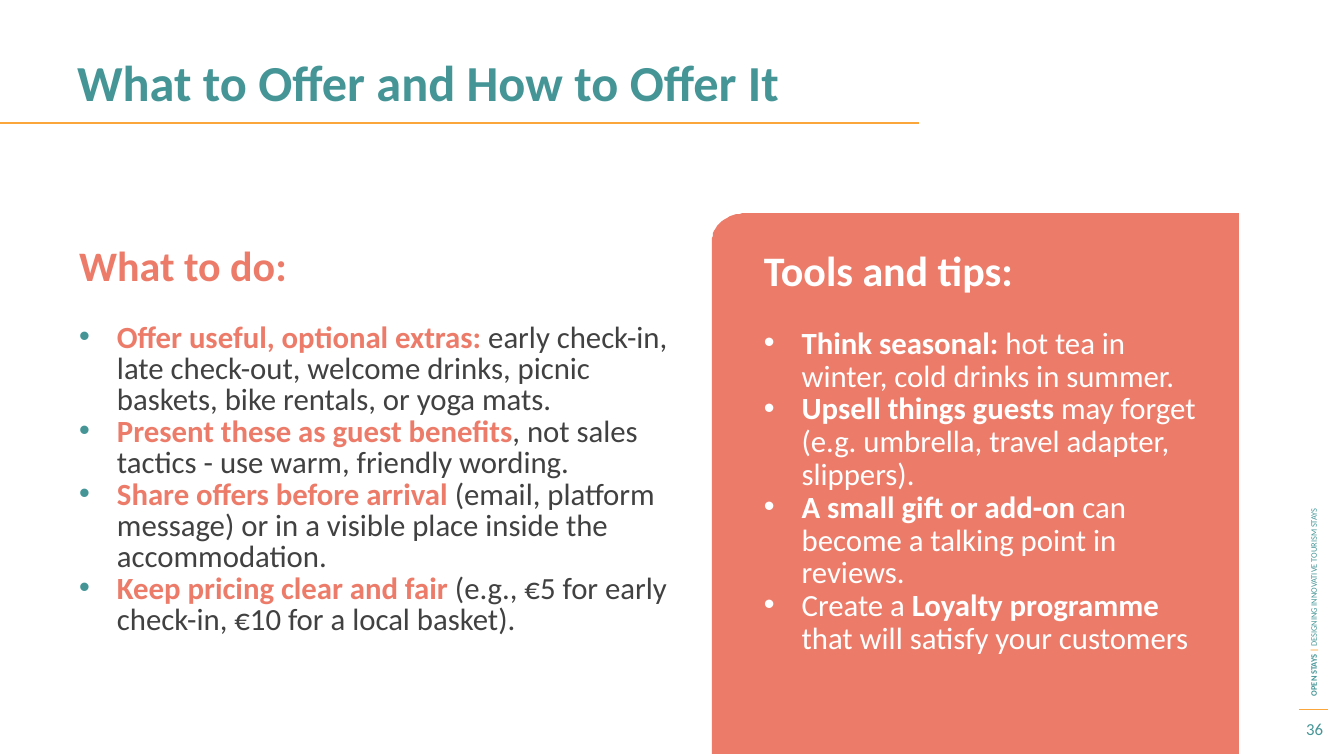
from math import cos, pi, sin

from lxml.etree import SubElement
from pptx import Presentation
from pptx.dml.color import RGBColor
from pptx.enum.shapes import MSO_CONNECTOR
from pptx.enum.text import MSO_ANCHOR, PP_ALIGN
from pptx.oxml.ns import qn
from pptx.util import Pt

PX = 9525  # EMU per px, 96 px to the inch
TEAL = RGBColor(0x45, 0x95, 0x97)
CORAL = RGBColor(0xEC, 0x7C, 0x69)
ORANGE = RGBColor(0xFB, 0xA6, 0x3B)
GREY = RGBColor(0x41, 0x41, 0x41)
WHITE = RGBColor(0xFF, 0xFF, 0xFF)

presentation = Presentation()
presentation.slide_width = 1280 * PX
presentation.slide_height = 720 * PX
slide = presentation.slides.add_slide(presentation.slide_layouts[6])


def add_text_frame(left, top, width, height, anchor=MSO_ANCHOR.TOP, rotation=0):
    shape = slide.shapes.add_textbox(left * PX, top * PX, width * PX, height * PX)
    shape.rotation = rotation
    shape.text_frame.word_wrap = True
    shape.text_frame.vertical_anchor = anchor
    return shape.text_frame


def fill_paragraph(paragraph, runs, size, spacing=None, bullet_color=None):
    """Add (text, colour, bold) runs, with a hanging bullet if it has a colour."""
    if spacing:
        paragraph.line_spacing = Pt(spacing)
    if bullet_color is not None:
        properties = paragraph._p.get_or_add_pPr()
        properties.set("marL", str(36 * PX))
        properties.set("indent", str(-36 * PX))
        color = SubElement(properties, qn("a:buClr"))
        SubElement(color, qn("a:srgbClr")).set("val", str(bullet_color))
        SubElement(properties, qn("a:buFont")).set("typeface", "Arial")
        SubElement(properties, qn("a:buChar")).set("char", "•")
    for text, color, bold in runs:
        run = paragraph.add_run()
        run.text = text
        run.font.name = "Calibri"
        run.font.size = Pt(size)
        run.font.bold = bold
        run.font.color.rgb = color


# Coral panel: two overlapping halves, each with a rounded top left corner
PANEL_TOP, PANEL_BOTTOM, PANEL_WIDTH = 203, 718, 392
CORNER_WIDTH, CORNER_HEIGHT, CORNER_STEPS = 32, 27, 16
for left in (788, 678):
    right = left + PANEL_WIDTH
    corner = []
    for step in range(CORNER_STEPS + 1):
        angle = pi / 2 * step / CORNER_STEPS
        corner.append((left + CORNER_WIDTH * (1 - cos(angle)),
                       PANEL_TOP + CORNER_HEIGHT * (1 - sin(angle))))
    builder = slide.shapes.build_freeform(left, PANEL_BOTTOM, scale=PX)
    builder.add_line_segments(corner + [(right, PANEL_TOP), (right, PANEL_BOTTOM)])
    panel = builder.convert_to_shape()
    panel.shadow.inherit = False
    panel.fill.solid()
    panel.fill.fore_color.rgb = CORAL
    panel.line.fill.background()

# Rules under the title and above the page number
for start, end, y, weight in ((0, 875, 117, 1.5), (1237, 1265, 676, 0.75)):
    rule = slide.shapes.add_connector(
        MSO_CONNECTOR.STRAIGHT, start * PX, y * PX, end * PX, y * PX)
    rule.line.color.rgb = ORANGE
    rule.line.width = Pt(weight)
    SubElement(rule._element.spPr, qn("a:effectLst"))

# Title, page number and side label
title = add_text_frame(64, 52, 1152, 84)
fill_paragraph(title.paragraphs[0],
               [("What to Offer and How to Offer It", TEAL, True)], 36, 37.2)

page_number = add_text_frame(1227, 678, 50, 33, MSO_ANCHOR.MIDDLE)
page_number.paragraphs[0].alignment = PP_ALIGN.CENTER
fill_paragraph(page_number.paragraphs[0], [("36", TEAL, False)], 12)

side_label = add_text_frame(974, 386, 554, 19, MSO_ANCHOR.MIDDLE, 270)
fill_paragraph(side_label.paragraphs[0], [
    ("OPEN STAYS ", TEAL, True),
    ("| ", ORANGE, True),
    ("DESIGNING INNOVATIVE TOURISM STAYS", TEAL, False),
], 6)

# Left column
heading = add_text_frame(66, 233, 589, 84)
fill_paragraph(heading.paragraphs[0], [("What to do:", CORAL, True)], 30, 29)

ACTIONS = [
    ("Offer useful, optional extras: ",
     "early check-in, late check-out, welcome drinks, picnic baskets, "
     "bike rentals, or yoga mats."),
    ("Present these as guest benefits",
     ", not sales tactics - use warm, friendly wording."),
    ("Share offers before arrival ",
     "(email, platform message) or in a visible place inside the accommodation."),
    ("Keep pricing clear and fair ",
     "(e.g., €5 for early check-in, €10 for a local basket)."),
]
actions = add_text_frame(66, 303, 589, 384)
for index, (lead, detail) in enumerate(ACTIONS):
    paragraph = actions.add_paragraph() if index else actions.paragraphs[0]
    fill_paragraph(paragraph, [(lead, CORAL, True), (detail, GREY, False)],
                   22, 22.4, TEAL)

# Right column
TIPS = [
    [("Think seasonal: ", True), ("hot tea in winter, cold drinks in summer.", False)],
    [("Upsell things guests ", True),
     ("may forget (e.g. umbrella, travel adapter, slippers).", False)],
    [("A small gift or add-on ", True),
     ("can become a talking point in reviews.", False)],
    [("Create a ", False), ("Loyalty programme ", True),
     ("that will satisfy your customers", False)],
]
tips = add_text_frame(718, 245, 438, 345)
fill_paragraph(tips.paragraphs[0], [("Tools and tips:", WHITE, True)], 30, 23.4)
for index, tip in enumerate(TIPS):
    paragraph = tips.add_paragraph()
    if index == 0:
        paragraph.space_before = Pt(23.4)
    fill_paragraph(paragraph, [(text, WHITE, bold) for text, bold in tip],
                   22, 23.4, WHITE)

presentation.save("out.pptx")
